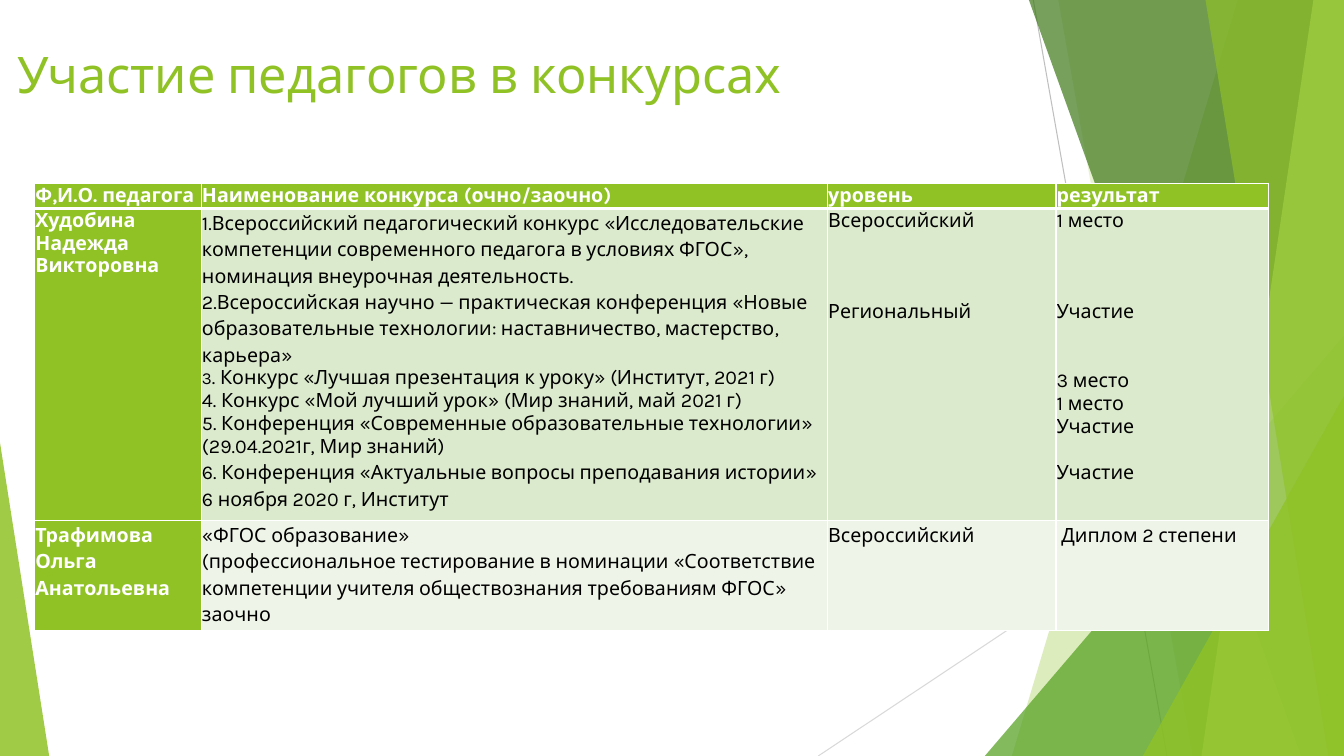
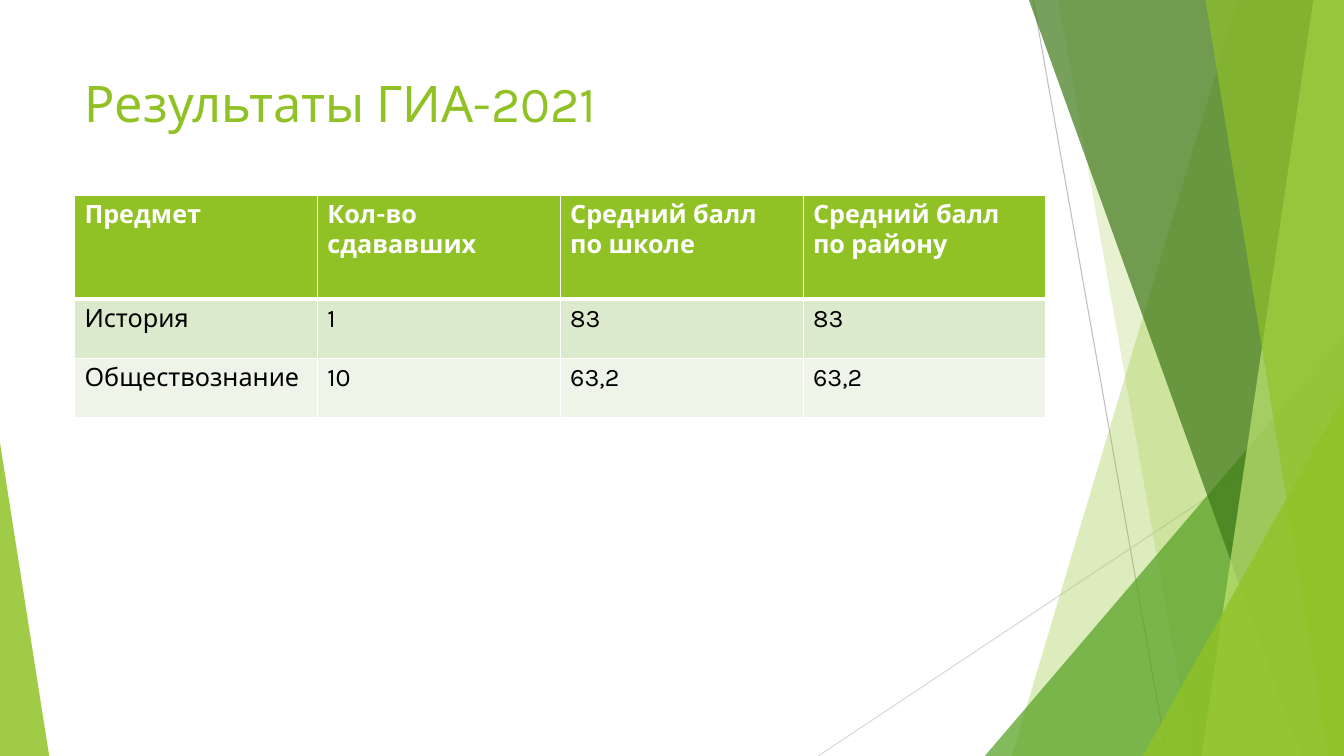
from dataclasses import dataclass

from lxml.etree import SubElement
from pptx import Presentation
from pptx.dml.color import RGBColor
from pptx.enum.shapes import MSO_CONNECTOR, MSO_SHAPE
from pptx.enum.text import MSO_ANCHOR
from pptx.oxml.ns import qn
from pptx.util import Cm, Pt

WHITE = RGBColor(0xFF, 0xFF, 0xFF)
BLACK = RGBColor(0, 0, 0)
GREEN = RGBColor(0x90, 0xC2, 0x26)
MID_GREEN = RGBColor(0x54, 0xA0, 0x21)
DARK_GREEN = RGBColor(0x3F, 0x78, 0x19)
LIME = RGBColor(0xC0, 0xE4, 0x74)
BAND_ODD = RGBColor(0xDB, 0xE9, 0xCD)
BAND_EVEN = RGBColor(0xEE, 0xF4, 0xE8)
GREY = RGBColor(0xBF, 0xBF, 0xBF)
LIGHT_GREY = RGBColor(0xD9, 0xD9, 0xD9)

FONT = "Karla"
SLIDE_W, SLIDE_H = 33.87, 19.05
LINE_FACTOR = 1.17  # line height of the font relative to its size


@dataclass
class Line:
    """One paragraph of a cell; gap is the space above it, in text lines."""
    text: str
    gap: int = 0
    spacing: float = 1.0
    small: str = ""


@dataclass
class TableStyle:
    size: int
    margins: tuple  # horizontal, vertical, in cm
    name_column: bool = False


def style_font(r, size, color, bold=False):
    r.font.name = FONT
    r.font.size = Pt(size)
    r.font.bold = bold
    r.font.color.rgb = color


def paint(sp, color, opacity):
    sp.shadow.inherit = False
    sp.line.fill.background()
    sp.fill.solid()
    sp.fill.fore_color.rgb = color
    clr = sp.fill._xPr.find(qn("a:solidFill"))[0]
    SubElement(clr, qn("a:alpha")).set("val", str(opacity * 1000))


def add_thin_line(s, x1, y1, x2, y2, color):
    line = s.shapes.add_connector(MSO_CONNECTOR.STRAIGHT, Cm(x1), Cm(y1), Cm(x2), Cm(y2))
    line.line.color.rgb = color
    line.line.width = Pt(0.75)
    SubElement(line._element.spPr, qn("a:effectLst"))


def add_ray(s, w, h, top, bottom, color, opacity):
    """Band to the right edge; top and bottom are its widths at each end."""
    builder = s.shapes.build_freeform(Cm(w - top), 0)
    corners = [(w, 0), (w, h), (w - bottom, h)]
    builder.add_line_segments([(Cm(x), Cm(y)) for x, y in corners], close=True)
    paint(builder.convert_to_shape(), color, opacity)


def add_corner(s, x, h, width, height, apex, color, opacity):
    """Right triangle on the bottom edge, upright side at apex (0 left, 1 right)."""
    sp = s.shapes.add_shape(MSO_SHAPE.ISOSCELES_TRIANGLE,
                            Cm(x), Cm(h - height), Cm(width), Cm(height))
    sp.adjustments[0] = apex
    paint(sp, color, opacity)


def add_backdrop(s, w, h):
    add_thin_line(s, w - 7.83, 0, w - 4.46, h, GREY)
    add_thin_line(s, w, h - 8.81, w - 13.25, h, LIGHT_GREY)
    add_ray(s, w, h, 2.68, 8.37, GREEN, 30)
    add_ray(s, w, h, 7.2, 3.82, GREEN, 20)
    add_corner(s, w - 9.05, h, 9.05, 10.59, 1, MID_GREEN, 72)
    add_ray(s, w, h, 7.94, 1.08, DARK_GREEN, 70)
    add_ray(s, w, h, 0.77, 3.59, LIME, 70)
    add_ray(s, w, h, 3.49, 0.39, GREEN, 65)
    add_corner(s, w - 5.07, h, 5.07, 9.07, 1, GREEN, 80)
    add_corner(s, 0, h, 1.24, 7.9, 0, GREEN, 85)


def add_title(s, text, x, y, w, h=3.66):
    tf = s.shapes.add_textbox(Cm(x), Cm(y), Cm(w), Cm(h)).text_frame
    tf.word_wrap = True
    tf.vertical_anchor = MSO_ANCHOR.TOP
    tf.text = text
    style_font(tf.paragraphs[0].runs[0], 36, GREEN)


def set_borders(cell, top, bottom):
    tcPr = cell._tc.get_or_add_tcPr()
    for side, width in (("L", 1), ("R", 1), ("T", top), ("B", bottom)):
        ln = SubElement(tcPr, qn(f"a:ln{side}"), w=str(Pt(width)))
        fill = SubElement(ln, qn("a:solidFill"))
        SubElement(fill, qn("a:srgbClr"), val=str(WHITE))


def fill_cell(cell, content, style, color, bold):
    lines = [Line(content)] if isinstance(content, str) else content
    tf = cell.text_frame
    for i, line in enumerate(lines):
        p = tf.add_paragraph() if i else tf.paragraphs[0]
        p.line_spacing = line.spacing
        p.space_before = Pt(round(line.gap * style.size * LINE_FACTOR, 1))
        if line.small:
            r = p.add_run()
            r.text = line.small
            style_font(r, style.size - 2, color, bold)
        r = p.add_run()
        r.text = line.text
        style_font(r, style.size, color, bold)


def add_grid(s, x, y, cols, heights, rows, style):
    """Table with a green header, banded rows and an optional green name column."""
    table = s.shapes.add_table(len(rows), len(cols), Cm(x), Cm(y),
                               Cm(sum(cols)), Cm(sum(heights))).table
    for column, width in zip(table.columns, cols):
        column.width = Cm(width)
    for i, (row, height) in enumerate(zip(rows, heights)):
        table.rows[i].height = Cm(height)
        for j, content in enumerate(row):
            cell = table.cell(i, j)
            cell.margin_left = cell.margin_right = Cm(style.margins[0])
            cell.margin_top = cell.margin_bottom = Cm(style.margins[1])
            set_borders(cell, 3 if i == 1 else 1, 3 if i == 0 else 1)
            accent = i == 0 or (style.name_column and j == 0)
            cell.fill.solid()
            cell.fill.fore_color.rgb = GREEN if accent else BAND_ODD if i % 2 else BAND_EVEN
            fill_cell(cell, content, style, WHITE if accent else BLACK, accent)


def wide(text):
    return Line(text, spacing=1.15)


CONTESTS = [
    ["Ф,И.О. педагога", "Наименование конкурса (очно/заочно)", "уровень", "результат"],
    [
        "Худобина Надежда Викторовна",
        [
            wide("1.Всероссийский педагогический конкурс «Исследовательские компетенции "
                 "современного педагога в условиях ФГОС», номинация внеурочная деятельность."),
            wide("2.Всероссийская научно — практическая конференция «Новые образовательные "
                 "технологии: наставничество, мастерство, карьера»"),
            Line(". Конкурс «Лучшая презентация к уроку» (Институт, 2021 г)", small="3"),
            Line("4. Конкурс «Мой лучший урок» (Мир знаний, май 2021 г)"),
            Line("5. Конференция «Современные образовательные технологии» "
                 "(29.04.2021г, Мир знаний)"),
            wide("6. Конференция «Актуальные вопросы преподавания истории» "
                 "6 ноября 2020 г, Институт"),
        ],
        [Line("Всероссийский"), Line("Региональный", gap=3)],
        [Line("1 место"), Line("Участие", gap=3), Line("3 место", gap=2),
         Line("1 место"), Line("Участие"), Line("Участие", gap=1)],
    ],
    [
        [wide("Трафимова Ольга Анатольевна")],
        [
            wide("«ФГОС образование»"),
            wide("(профессиональное тестирование в номинации «Соответствие компетенции "
                 "учителя обществознания требованиям ФГОС»"),
            wide("заочно"),
        ],
        [wide("Всероссийский")],
        [wide(" Диплом 2 степени")],
    ],
]

EXAMS = [
    ["Предмет", "Кол-во сдававших", "Средний балл по школе", "Средний балл по району"],
    ["История", "1", "83", "83"],
    ["Обществознание", "10", "63,2", "63,2"],
]


def add_slide(prs):
    s = prs.slides.add_slide(prs.slide_layouts[6])
    add_backdrop(s, SLIDE_W, SLIDE_H)
    return s


def add_contests_slide(prs):
    s = add_slide(prs)
    add_title(s, "Участие педагогов в конкурсах", 0.18, 0.97, 25.58)
    add_grid(s, 0.87, 4.62, [4.2, 15.78, 5.76, 5.35], [0.38, 6.2, 1.88], CONTESTS,
             TableStyle(14, (0.02, 0.02), name_column=True))


def add_exams_slide(prs):
    s = add_slide(prs)
    add_title(s, "Результаты ГИА-2021", 1.88, 1.7, 23.88)
    add_grid(s, 1.88, 4.93, [6.12] * 4, [2.6, 1.5, 1.5], EXAMS,
             TableStyle(18, (0.25, 0.13)))


def main():
    prs = Presentation()
    prs.slide_width, prs.slide_height = Cm(SLIDE_W), Cm(SLIDE_H)
    add_contests_slide(prs)
    add_exams_slide(prs)
    prs.save("out.pptx")


if __name__ == "__main__":
    main()
